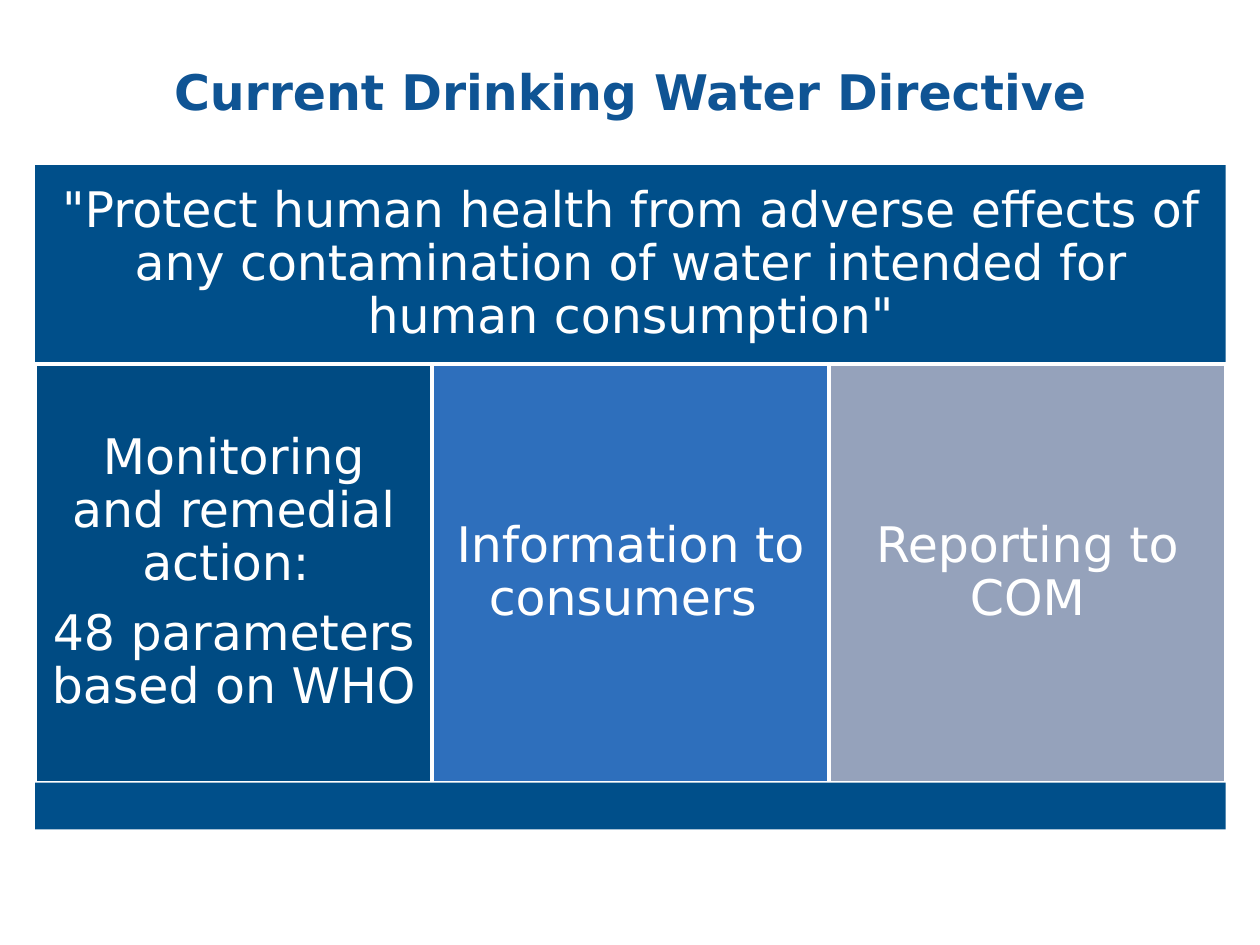
import dataclasses

import pptx
import pptx.dml.color
import pptx.enum.shapes
import pptx.enum.text
import pptx.util

Cm = pptx.util.Cm
Pt = pptx.util.Pt


@dataclasses.dataclass(frozen=True)
class Theme:
    font: str = "DejaVu Sans"
    size: int = 28
    title: str = "0F5494"
    band: str = "004F8A"
    monitoring: str = "004B83"
    information: str = "2E6FBC"
    reporting: str = "95A2BB"
    white: str = "FFFFFF"


THEME = Theme()
LEFT, TOP, WIDTH = 0.71, 3.33, 24
AIM_HEIGHT, PILLAR_HEIGHT, BASE_HEIGHT = 4.01, 8.44, 0.94


def rgb(value):
    return pptx.dml.color.RGBColor.from_string(value)


def write_text(box, paragraphs, color=THEME.white, bold=False, inset=0.3,
               line_spacing=0.9, space_after=9.8):
    frame = box.text_frame
    frame.word_wrap = True
    frame.auto_size = pptx.enum.text.MSO_AUTO_SIZE.NONE
    frame.vertical_anchor = pptx.enum.text.MSO_ANCHOR.MIDDLE
    frame.margin_left = frame.margin_right = Cm(inset)
    frame.margin_top = frame.margin_bottom = Cm(inset)
    for index, text in enumerate(paragraphs):
        para = frame.add_paragraph() if index else frame.paragraphs[0]
        para.alignment = pptx.enum.text.PP_ALIGN.CENTER
        para.line_spacing = line_spacing
        para.space_before = Pt(0)
        para.space_after = Pt(space_after)
        span = para.add_run()
        span.text = text
        span.font.name = THEME.font
        span.font.size = Pt(THEME.size)
        span.font.bold = bold
        span.font.color.rgb = rgb(color)


def add_title(page, text):
    title = page.shapes.title
    title.left, title.top = Cm(1.27), Cm(0.53)
    title.width, title.height = Cm(22.86), Cm(2.59)
    write_text(title, [text], color=THEME.title, bold=True, inset=0.2,
               line_spacing=1.0, space_after=0)


def add_block(page, left, top, width, height, fill, paragraphs=(), outlined=False):
    block = page.shapes.add_shape(pptx.enum.shapes.MSO_SHAPE.RECTANGLE,
                                  Cm(left), Cm(top), Cm(width), Cm(height))
    block.shadow.inherit = False
    block.fill.solid()
    block.fill.fore_color.rgb = rgb(fill)
    if outlined:
        block.line.color.rgb = rgb(THEME.white)
        block.line.width = Pt(2)
    else:
        block.line.fill.background()
    write_text(block, paragraphs)


def add_pillars(page, top, pillars):
    width = WIDTH / len(pillars)
    for index, (fill, paragraphs) in enumerate(pillars):
        add_block(page, LEFT + index * width, top, width, PILLAR_HEIGHT, fill,
                  paragraphs, outlined=True)


def main():
    deck = pptx.Presentation()
    deck.slide_width, deck.slide_height = Cm(25.4), Cm(19.05)
    page = deck.slides.add_slide(deck.slide_layouts.get_by_name("Title Only"))
    add_title(page, "Current Drinking Water Directive")
    add_block(page, LEFT, TOP, WIDTH, AIM_HEIGHT, THEME.band,
              ['"Protect human health from adverse effects of any contamination '
               'of water intended for human consumption"'])
    pillar_top = TOP + AIM_HEIGHT
    add_pillars(page, pillar_top, [
        (THEME.monitoring, ["Monitoring and remedial action: ",
                            "48 parameters based on WHO "]),
        (THEME.information, ["Information to consumers "]),
        (THEME.reporting, ["Reporting to COM"]),
    ])
    add_block(page, LEFT, pillar_top + PILLAR_HEIGHT, WIDTH, BASE_HEIGHT, THEME.band)
    deck.save("out.pptx")


if __name__ == "__main__":
    main()
